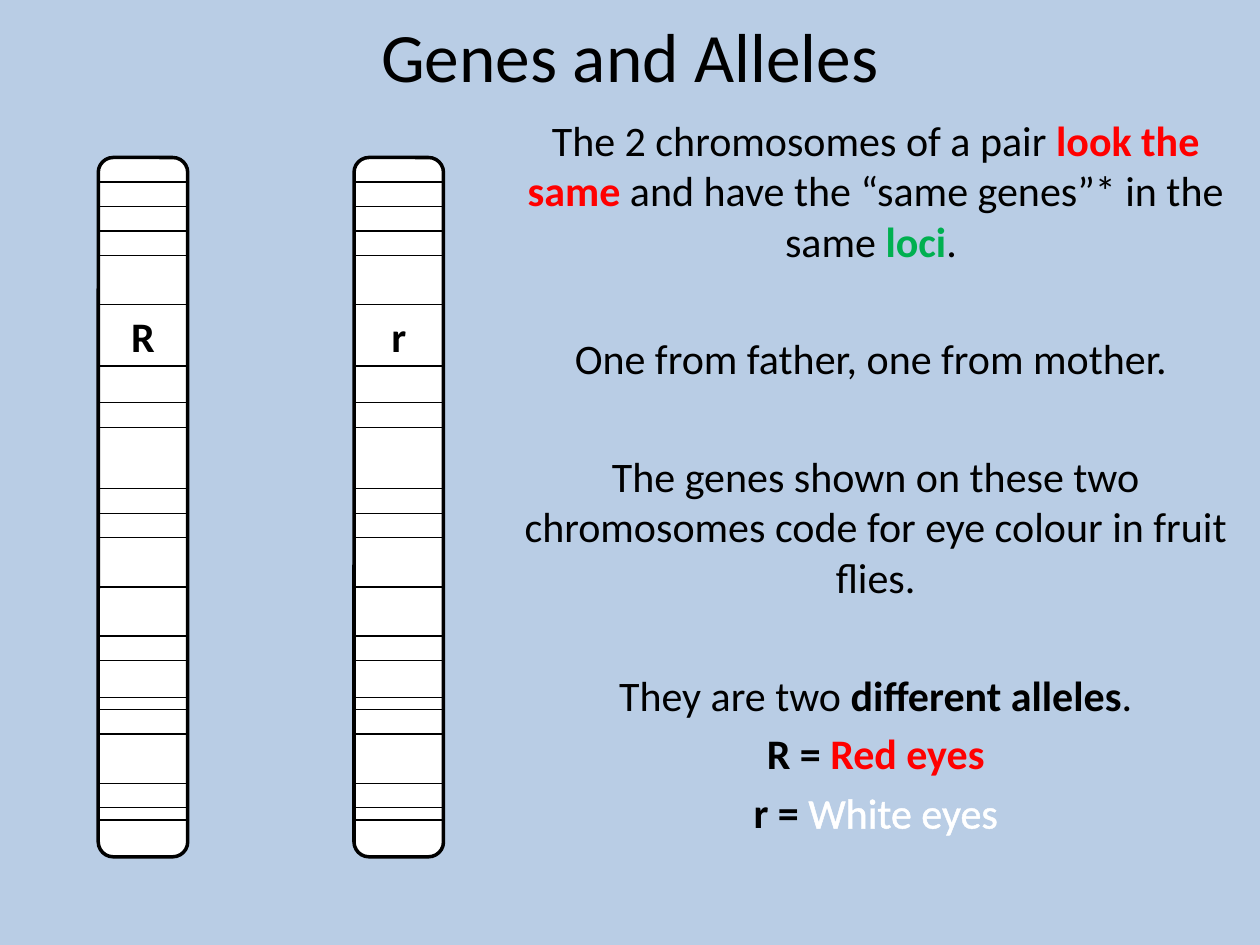
from lxml.etree import SubElement
from pptx import Presentation
from pptx.dml.color import RGBColor
from pptx.enum.shapes import MSO_CONNECTOR as Connector, MSO_SHAPE as Shape
from pptx.enum.text import MSO_ANCHOR as Anchor, PP_ALIGN as Align
from pptx.oxml import parse_xml
from pptx.oxml.ns import nsdecls, qn
from pptx.util import Inches, Pt

BLACK = RGBColor(0, 0, 0)
WHITE = RGBColor(255, 255, 255)
RED = RGBColor(255, 0, 0)
GREEN = RGBColor(0, 176, 80)
PALE_BLUE = RGBColor(185, 205, 229)


def add_text(shapes, box, anchor=Anchor.TOP):
    frame = shapes.add_textbox(*map(Inches, box)).text_frame
    frame.word_wrap = True
    frame.vertical_anchor = anchor
    return frame


def add_runs(paragraph, runs, size=24):
    paragraph.alignment = Align.CENTER
    for text, color, bold in runs:
        run = paragraph.add_run()
        run.text = text
        run.font.name = "Calibri"
        run.font.size = Pt(size)
        run.font.bold = bold
        run.font.color.rgb = color
    return run


presentation = Presentation()
presentation.slide_width = Inches(10)
presentation.slide_height = Inches(7.5)
slide = presentation.slides.add_slide(presentation.slide_layouts[6])
slide.background.fill.solid()
slide.background.fill.fore_color.rgb = PALE_BLUE

title = add_text(slide.shapes, (0.5, 0.16, 9, 0.55), Anchor.MIDDLE)
add_runs(title.paragraphs[0], [("Genes and Alleles", BLACK, False)], 39.6)

NEAR, FAR = 4.8, 38.4
explanation = [
    (NEAR, [
        ("The 2 chromosomes of a pair ", BLACK, False),
        ("look the same", RED, True),
        (" and have the “same genes”* in the same ", BLACK, False),
        ("loci", GREEN, True),
        (". ", BLACK, False),
    ]),
    (FAR, [("One from father, one from mother. ", BLACK, False)]),
    (FAR, [("The genes shown on these two chromosomes code for eye colour "
            "in fruit flies.", BLACK, False)]),
    (FAR, [
        ("They are two ", BLACK, False),
        ("different alleles", BLACK, True),
        (".", BLACK, False),
    ]),
    (NEAR, [("R = ", BLACK, True), ("Red eyes", RED, True)]),
    (NEAR, [("r = ", BLACK, True), ("White eyes", WHITE, False)]),
]
body = add_text(slide.shapes, (4.06, 0.86, 5.78, 6.41))
for index, (gap, runs) in enumerate(explanation):
    paragraph = body.add_paragraph() if index else body.paragraphs[0]
    paragraph.space_before = Pt(gap)
    last_run = add_runs(paragraph, runs)

outline = parse_xml(
    f'<a:ln {nsdecls("a")} w="{Pt(1.45)}"><a:solidFill>'
    f'<a:srgbClr val="{WHITE}"/></a:solidFill></a:ln>'
)
last_run.font._element.insert(0, outline)

TOP, WIDTH, HEIGHT = 1.25, 0.71, 5.55
ROW = HEIGHT / 57
BAND_ROWS = [2, 4, 6, 8, 12, 17, 20, 22, 27, 29, 31, 35, 39, 41, 44, 45, 47, 51, 53, 54]

for left, allele in ((0.78, "R"), (2.81, "r")):
    group = slide.shapes.add_group_shape()
    chromosome = group.shapes.add_shape(
        Shape.ROUNDED_RECTANGLE, *map(Inches, (left, TOP, WIDTH, HEIGHT)))
    chromosome.shadow.inherit = False
    chromosome.fill.solid()
    chromosome.fill.fore_color.rgb = WHITE
    chromosome.line.color.rgb = BLACK
    chromosome.line.width = Pt(2)
    for row in BAND_ROWS:
        height = TOP + row * ROW
        band = group.shapes.add_connector(
            Connector.STRAIGHT, *map(Inches, (left, height, left + WIDTH, height)))
        band.line.color.rgb = BLACK
        band.line.width = Pt(0.75)
        SubElement(band._element.spPr, qn("a:effectLst"))
    label = add_text(group.shapes, (left, TOP + 12 * ROW, WIDTH, 0.63))
    add_runs(label.paragraphs[0], [(allele, BLACK, True)])

presentation.save("out.pptx")
